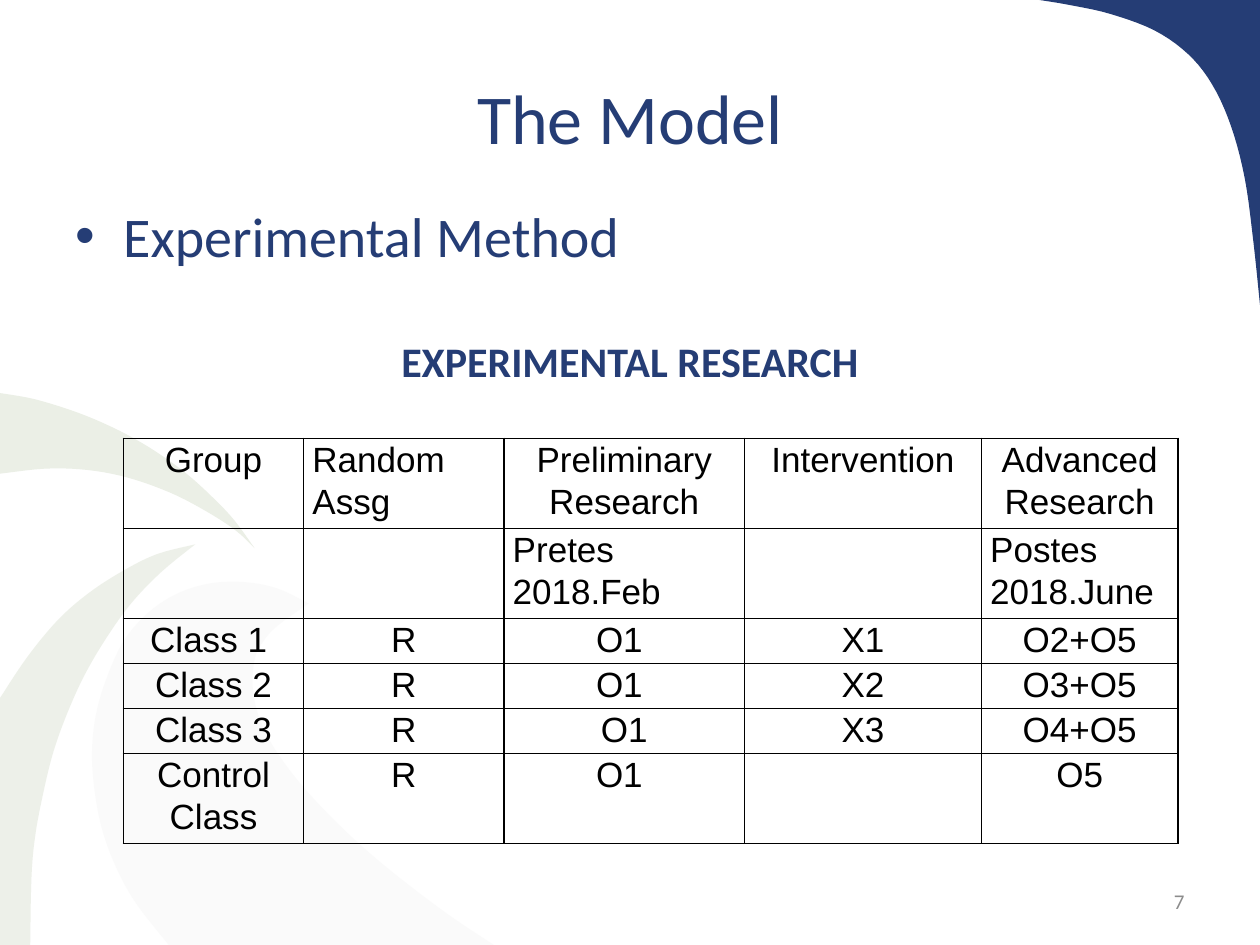
from dataclasses import dataclass

from lxml import etree
from pptx import Presentation, util as u
from pptx.dml.color import RGBColor
from pptx.enum import text as t
from pptx.oxml.ns import qn

# Grid: the slide is 10 columns wide and 7.5 rows high
COLUMNS, ROWS = 10, 7.5
CELL = u.Inches(1)
NAVY, BLACK, GREY = "253D75", "000000", "8C8C8C"
CENTER, JUSTIFY = t.PP_ALIGN.CENTER, t.PP_ALIGN.JUSTIFY


@dataclass
class Swoosh:
    """Outline of smooth arcs, each a list of knots, joined at sharp corners."""
    arcs: list
    color: str
    opacity: int = 100


@dataclass
class Line:
    """One paragraph with its look."""
    words: str
    size: float
    color: str = NAVY
    font: str = "Calibri"
    bold: bool = False
    align: t.PP_ALIGN = CENTER
    before: float = 0
    spacing: float = 1.0
    bullet: str = ""


SWOOSHES = [
    Swoosh([[(10, 0)],
            [(10, 2.42), (9.95, 1.94), (9.88, 1.42), (9.77, 1), (9.62, 0.67), (9.43, 0.43),
             (9.16, 0.24), (8.81, 0.11), (8.49, 0.04), (8.25, 0)]], NAVY),
    Swoosh([[(0, 3.12), (0.28, 3.17), (0.63, 3.28), (0.95, 3.42), (1.23, 3.58), (1.48, 3.76),
             (1.69, 3.95), (1.86, 4.13), (2.02, 4.35)],
            [(2.02, 4.35), (1.87, 4.21), (1.64, 4.06), (1.35, 3.91), (1.01, 3.79),
             (0.69, 3.73), (0.36, 3.72), (0, 3.76)]], "EBEFE6"),
    Swoosh([[(0, 5.54), (0.22, 5.21), (0.46, 4.92), (0.7, 4.71), (0.96, 4.54), (1.24, 4.4),
             (1.55, 4.32)],
            [(1.55, 4.32), (1.28, 4.54), (1.04, 4.79), (0.84, 5.07), (0.67, 5.36),
             (0.53, 5.67), (0.42, 5.98), (0.34, 6.31), (0.28, 6.63), (0.25, 6.96), (0.24, 7.5)],
            [(0, 7.5)]], "D7DFCE", 44),
    Swoosh([[(2.45, 4.79), (2.2, 4.67), (1.94, 4.62), (1.67, 4.63), (1.41, 4.71), (1.18, 4.86),
             (0.98, 5.09), (0.84, 5.4), (0.76, 5.68), (0.73, 5.97), (0.75, 6.27), (0.81, 6.58),
             (0.92, 6.88), (1.08, 7.17), (1.34, 7.5)],
            [(3.92, 7.5), (3.56, 7.26), (3.15, 6.95), (2.81, 6.66), (2.49, 6.34), (2.26, 6.06),
             (2.09, 5.78), (2.01, 5.5), (2.02, 5.24), (2.09, 5.09), (2.21, 4.96),
             (2.45, 4.79)]], "F2F2F2", 34),
]

RESEARCH_DESIGN = [
    ["Group", "Random Assg", "Preliminary Research", "Intervention", "Advanced Research"],
    ["", "", "Pretes 2018.Feb", "", "Postes 2018.June"],
    ["Class 1 ", "R", "O1 ", "X1", "O2+O5"],
    ["Class 2", "R", "O1 ", "X2", "O3+O5"],
    ["Class 3", "R", "O1", "X3", "O4+O5"],
    ["Control Class", "R", "O1 ", "", "O5"],
]
COLUMN_WIDTHS = [1.43, 1.59, 1.91, 1.88, 1.56]
LINES_PER_ROW = [2, 2, 1, 1, 1, 2]
LINE_HEIGHT = 0.28
JUSTIFIED = {"Random Assg", "Pretes 2018.Feb", "Postes 2018.June"}


def grid(value: float) -> int:
    return round(value * CELL)


def rgb(color: str) -> RGBColor:
    return RGBColor.from_string(color)


def apply(target, formats: dict) -> None:
    for name, value in formats.items():
        setattr(target, name, value)


def smooth(knots: list, steps: int = 5) -> list:
    """Points of a Catmull-Rom curve through the knots."""
    padded = [knots[0], *knots, knots[-1]]
    points = [knots[0]]
    for a, b, c, d in zip(padded, padded[1:], padded[2:], padded[3:]):
        for step in range(1, steps + 1):
            s = step / steps
            points.append(tuple(
                (2 * q + (r - p) * s + (2 * p - 5 * q + 4 * r - v) * s ** 2
                 + (3 * q - p - 3 * r + v) * s ** 3) / 2
                for p, q, r, v in zip(a, b, c, d)))
    return points


def draw_swoosh(slide, swoosh: Swoosh) -> None:
    points = [(grid(x), grid(y)) for arc in swoosh.arcs for x, y in smooth(arc)]
    builder = slide.shapes.build_freeform(*points[0])
    builder.add_line_segments(points[1:], close=True)
    shape = builder.convert_to_shape()
    shape.shadow.inherit = False
    shape.line.fill.background()
    shape.fill.solid()
    shape.fill.fore_color.rgb = rgb(swoosh.color)
    if swoosh.opacity < 100:
        color = shape.fill._xPr.find(".//" + qn("a:srgbClr"))
        etree.SubElement(color, qn("a:alpha"), val=str(swoosh.opacity * 1000))


def write_line(paragraph, line: Line) -> None:
    if line.bullet:
        properties = paragraph._p.get_or_add_pPr()
        properties.set("marL", str(grid(0.38)))
        properties.set("indent", str(grid(-0.38)))
        etree.SubElement(properties, qn("a:buFont"), typeface="Arial")
        etree.SubElement(properties, qn("a:buChar"), char=line.bullet)
    apply(paragraph, {"alignment": line.align, "line_spacing": line.spacing})
    if line.before:
        paragraph.space_before = u.Pt(line.before)
    run = paragraph.add_run()
    run.text = line.words
    apply(run.font, {"name": line.font, "size": u.Pt(line.size), "bold": line.bold})
    run.font.color.rgb = rgb(line.color)


def draw_text(slide, place: tuple, lines: list, anchor=t.MSO_ANCHOR.MIDDLE) -> None:
    frame = slide.shapes.add_textbox(*map(grid, place)).text_frame
    apply(frame, {"word_wrap": True, "vertical_anchor": anchor})
    for index, line in enumerate(lines):
        write_line(frame.add_paragraph() if index else frame.paragraphs[0], line)


def style_cell(cell) -> None:
    side = grid(0.07)
    apply(cell, {"margin_left": side, "margin_right": side, "margin_top": 0, "margin_bottom": 0})
    properties = cell._tc.get_or_add_tcPr()
    for edge in ("lnL", "lnR", "lnT", "lnB"):
        border = etree.SubElement(properties, qn("a:" + edge), w=str(u.Pt(1)))
        fill = etree.SubElement(border, qn("a:solidFill"))
        etree.SubElement(fill, qn("a:srgbClr"), val=BLACK)
    cell.fill.background()


def draw_design_table(slide, left: float, top: float) -> None:
    heights = [count * LINE_HEIGHT for count in LINES_PER_ROW]
    table = slide.shapes.add_table(
        len(heights), len(COLUMN_WIDTHS),
        *map(grid, (left, top, sum(COLUMN_WIDTHS), sum(heights)))).table
    apply(table, {"first_row": False, "horz_banding": False})
    for column, width in zip(table.columns, COLUMN_WIDTHS):
        column.width = grid(width)
    for row, height, entries in zip(table.rows, heights, RESEARCH_DESIGN):
        row.height = grid(height)
        for cell, words in zip(row.cells, entries):
            style_cell(cell)
            if words:
                align = JUSTIFY if words in JUSTIFIED else CENTER
                write_line(cell.text_frame.paragraphs[0],
                           Line(words, 20, BLACK, "Arial", align=align, spacing=1.07))


def main() -> None:
    deck = Presentation()
    apply(deck, {"slide_width": grid(COLUMNS), "slide_height": grid(ROWS)})
    slide = deck.slides.add_slide(deck.slide_layouts[6])

    # Background decoration
    for swoosh in SWOOSHES:
        draw_swoosh(slide, swoosh)

    # Title, method and table heading
    draw_text(slide, (0.5, 0.3, 9, 1.25), [Line("The Model", 40)])
    draw_text(slide, (0.5, 1.55, 9, 5.15), [
        Line("Experimental Method", 32, align=t.PP_ALIGN.LEFT, bullet="•"),
        Line("EXPERIMENTAL RESEARCH", 24, bold=True, before=38),
    ], t.MSO_ANCHOR.TOP)

    # Page number
    draw_text(slide, (7.17, 6.95, 2.33, 0.4), [Line("7", 12, GREY, align=t.PP_ALIGN.RIGHT)])

    # Research design
    draw_design_table(slide, 0.98, 3.48)
    deck.save("out.pptx")


if __name__ == "__main__":
    main()
